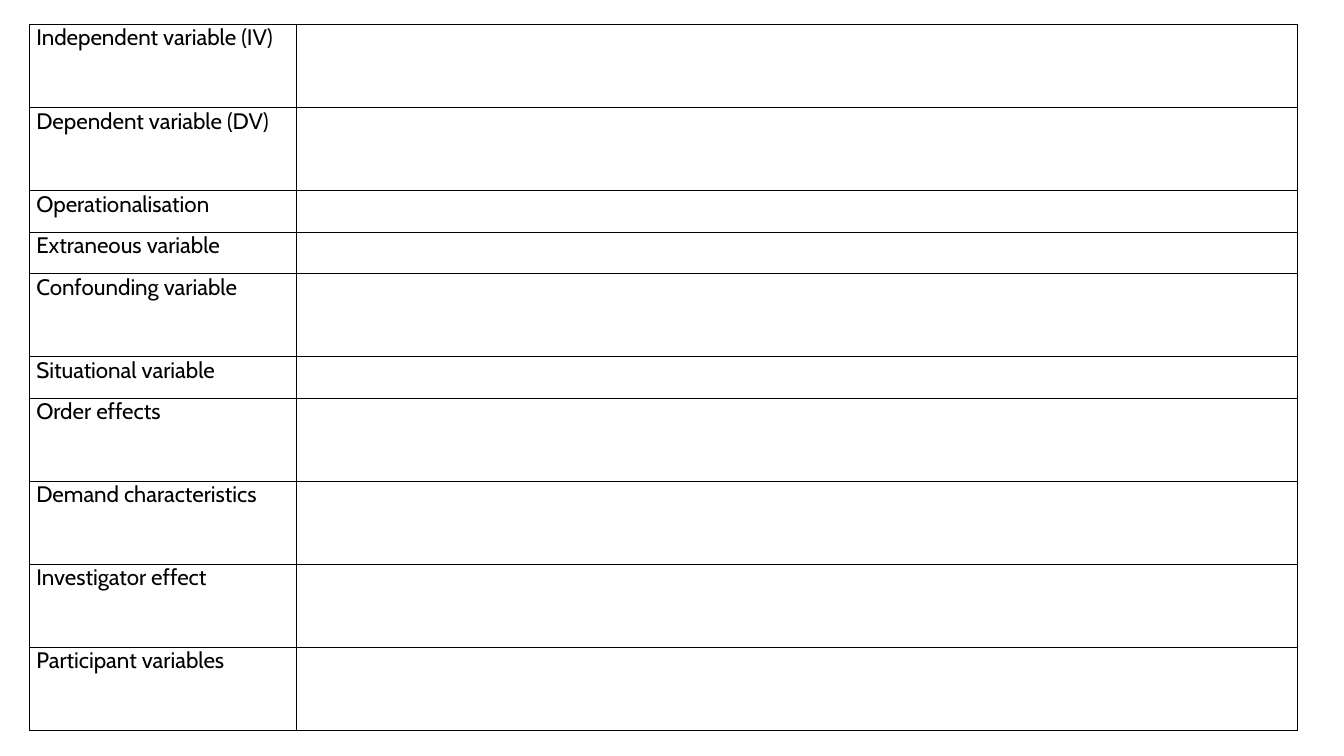
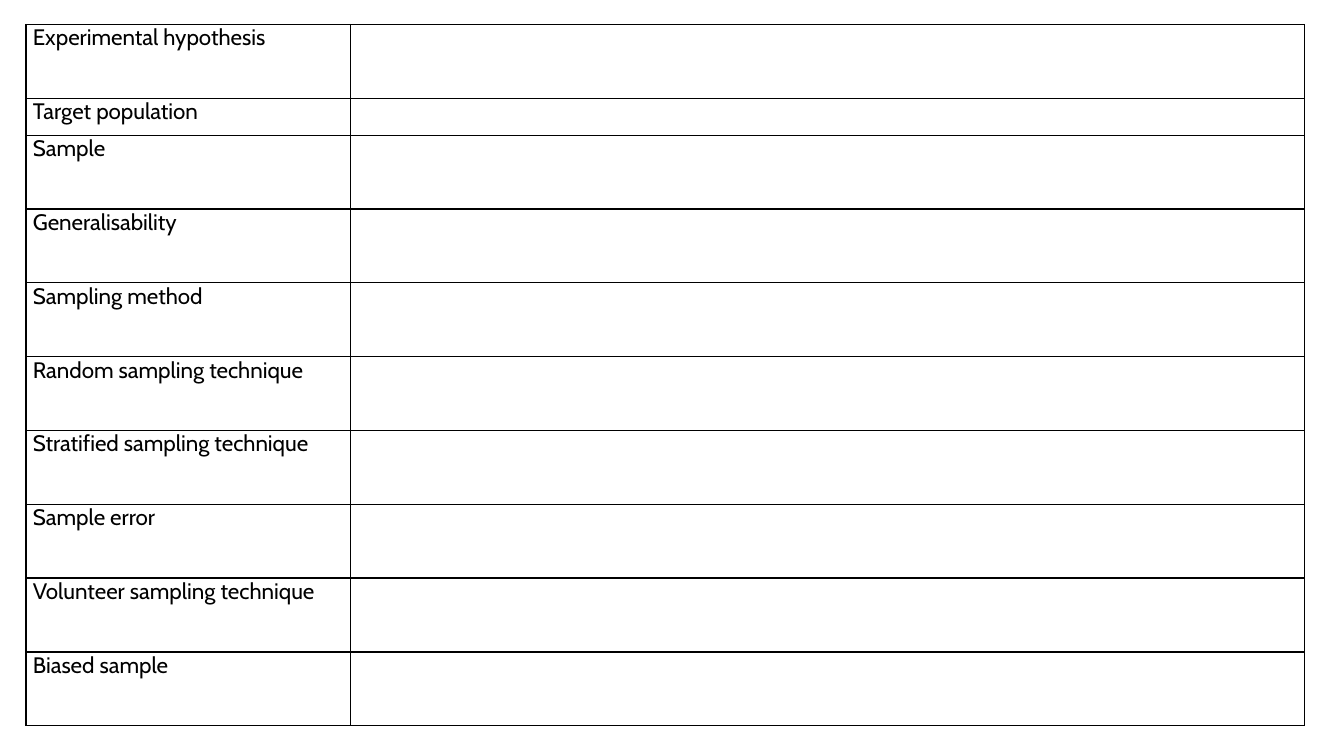
from lxml.etree import SubElement
from pptx import Presentation
from pptx.dml.color import RGBColor
from pptx.oxml.ns import qn
from pptx.util import Pt

PX = 6350  # EMU per px: the slide is 1920 x 1080 px
COLOURS = {"ink": "000000"}
FONT = "Cabin"
TEXT_SIZE = Pt(16)
BORDER_WIDTH = Pt(1)
TABLE_TOP = 35
CELL_INSET = 10
BLANK_LAYOUT = 6

# Each term with its row height in units
VARIABLE_TERMS = [
    ("Independent variable (IV)", 2),
    ("Dependent variable (DV)", 2),
    ("Operationalisation", 1),
    ("Extraneous variable", 1),
    ("Confounding variable", 2),
    ("Situational variable", 1),
    ("Order effects", 2),
    ("Demand characteristics", 2),
    ("Investigator effect", 2),
    ("Participant variables", 2),
]
SAMPLING_TERMS = [
    ("Experimental hypothesis", 2),
    ("Target population", 1),
    ("Sample", 2),
    ("Generalisability", 2),
    ("Sampling method", 2),
    ("Random sampling technique", 2),
    ("Stratified sampling technique", 2),
    ("Sample error", 2),
    ("Volunteer sampling technique", 2),
    ("Biased sample", 2),
]


def px(length):
    return length * PX


def add_borders(cell):
    """Draw a thin line on all four sides of a cell."""
    properties = cell._tc.get_or_add_tcPr()
    for position, side in enumerate(("a:lnL", "a:lnR", "a:lnT", "a:lnB")):
        line = SubElement(properties, qn(side), w=str(BORDER_WIDTH))
        fill = SubElement(line, qn("a:solidFill"))
        SubElement(fill, qn("a:srgbClr"), val=COLOURS["ink"])
        properties.insert(position, line)  # borders come before the fill


def format_cell(cell, text=""):
    cell.margin_left = cell.margin_right = px(CELL_INSET)
    cell.margin_top = cell.margin_bottom = 0
    cell.fill.background()
    add_borders(cell)
    cell.text = text
    font = cell.text_frame.paragraphs[0].font
    font.name = FONT
    font.size = TEXT_SIZE
    font.color.rgb = RGBColor.from_string(COLOURS["ink"])


def add_term_slide(deck, terms, left, column_widths, height):
    """Add a worksheet slide: terms on the left, room for answers on the right."""
    page = deck.slides.add_slide(deck.slide_layouts[BLANK_LAYOUT])
    table = page.shapes.add_table(
        len(terms), len(column_widths), px(left), px(TABLE_TOP),
        px(sum(column_widths)), px(height)).table
    table.first_row = False
    table.horz_banding = False

    for column, width in zip(table.columns, column_widths):
        column.width = px(width)

    unit_height = px(height) // sum(units for _, units in terms)
    for row, (term, units) in zip(table.rows, terms):
        row.height = units * unit_height
        term_cell, answer_cell = row.cells
        format_cell(term_cell, term)
        format_cell(answer_cell)


def main():
    deck = Presentation()
    deck.slide_width, deck.slide_height = px(1920), px(1080)

    add_term_slide(deck, VARIABLE_TERMS, left=42,
                   column_widths=(382, 1430), height=1009)
    add_term_slide(deck, SAMPLING_TERMS, left=37,
                   column_widths=(464, 1363), height=1002)

    deck.save("out.pptx")


if __name__ == "__main__":
    main()
